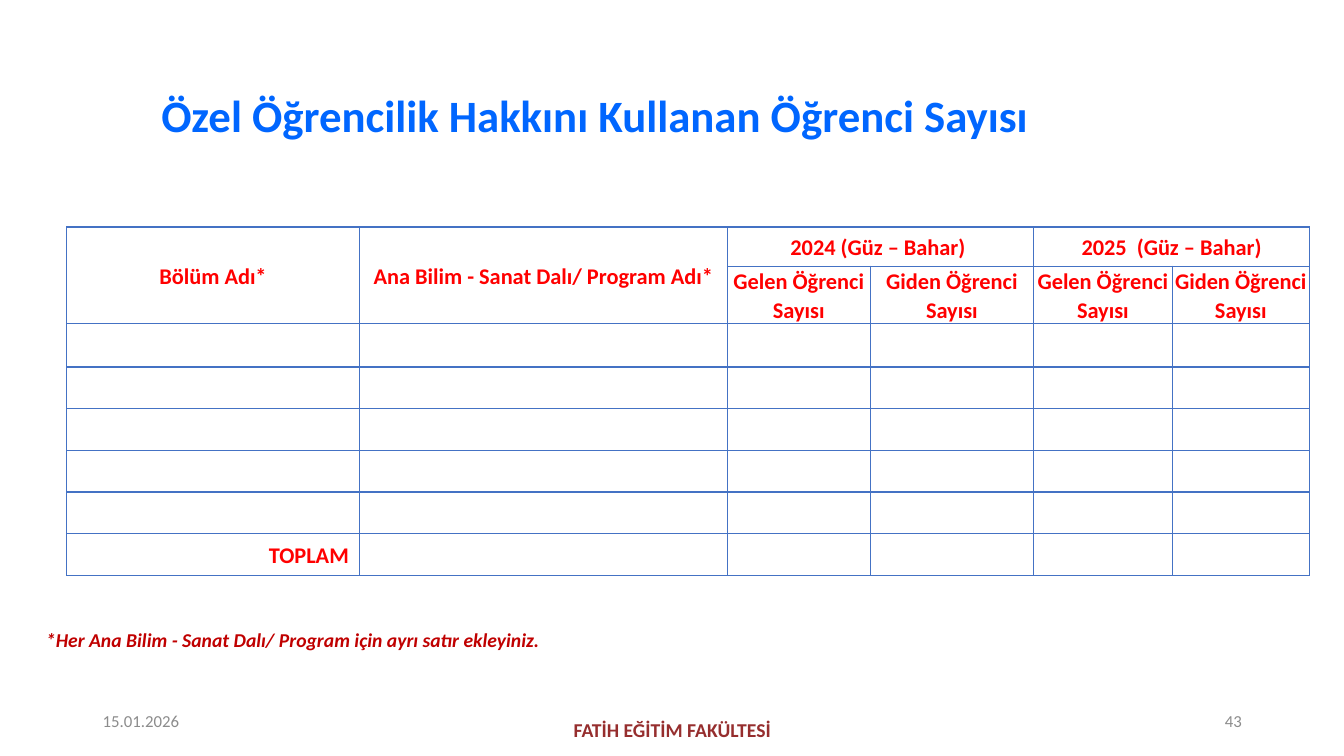
import pptx
import pptx.util
import pptx.dml.color
import pptx.enum.text
import pptx.oxml
import pptx.oxml.ns
import lxml.etree

Cm = pptx.util.Cm
Pt = pptx.util.Pt
ALIGN = pptx.enum.text.PP_ALIGN
ANCHOR = pptx.enum.text.MSO_ANCHOR

COLORS = {
    "title": "0066FF",
    "header": "FF0000",
    "border": "4472C4",
    "note": "C00000",
    "faculty": "962E2E",
    "muted": "8C8C8C",
}
FONT = "Calibri"

TEXTS = [
    {"text": "FATİH EĞİTİM FAKÜLTESİ", "at": (11.23, 17.88, 11.43, 1.02),
     "size": 14, "color": "faculty", "bold": True, "align": ALIGN.CENTER},
    {"text": "Özel Öğrencilik Hakkını Kullanan Öğrenci Sayısı ", "at": (0.41, 2.24, 29.44, 1.47),
     "size": 32, "color": "title", "bold": True, "align": ALIGN.CENTER, "spacing": 0.9},
    {"text": "15.01.2026", "at": (2.34, 17.65, 7.62, 1.02), "size": 12, "color": "muted"},
    {"text": "43", "at": (23.93, 17.65, 7.62, 1.02),
     "size": 12, "color": "muted", "align": ALIGN.RIGHT},
    {"text": "*Her Ana Bilim - Sanat Dalı/ Program için ayrı satır ekleyiniz.",
     "at": (0.91, 15.7, 18.75, 0.86), "size": 14, "color": "note",
     "bold": True, "italic": True, "anchor": ANCHOR.TOP},
]

INCOMING, OUTGOING = "Gelen Öğrenci Sayısı", "Giden Öğrenci Sayısı"
BLANK_ROWS = 5
ROWS = [
    ["Bölüm Adı*", "Ana Bilim - Sanat Dalı/ Program Adı*",
     "2024 (Güz – Bahar) ", "", "2025  (Güz – Bahar)", ""],
    ["", "", INCOMING, OUTGOING, INCOMING, OUTGOING],
    *[[""] * 6 for _ in range(BLANK_ROWS)],
    ["TOPLAM"] + [""] * 5,
]
MERGES = [((0, 0), (1, 0)), ((0, 1), (1, 1)), ((0, 2), (0, 3)), ((0, 4), (0, 5))]
TABLE_LEFT, TABLE_TOP = 1.68, 5.72
COLUMN_WIDTHS = [7.38, 9.27, 3.6, 4.12, 3.49, 3.46]
ROW_HEIGHTS = [0.99, 1.24, 1.09] + [1.05] * BLANK_ROWS
TOTAL_INDENT = 0.27


def write(paragraph, text, size, color, bold=False, italic=False,
          align=ALIGN.LEFT, spacing=None):
    paragraph.text = text
    paragraph.alignment = align
    paragraph.line_spacing = spacing
    font = paragraph.font
    font.name, font.size, font.bold, font.italic = FONT, Pt(size), bold, italic
    font.color.rgb = pptx.dml.color.RGBColor.from_string(COLORS[color])


def add_text(slide, text, at, anchor=ANCHOR.MIDDLE, **style):
    frame = slide.shapes.add_textbox(*map(Cm, at)).text_frame
    frame.word_wrap = True
    frame.vertical_anchor = anchor
    write(frame.paragraphs[0], text, **style)


def draw_borders(cell):
    properties = cell._tc.get_or_add_tcPr()
    for index, side in enumerate(("lnL", "lnR", "lnT", "lnB")):
        line = pptx.oxml.parse_xml(
            f'<a:{side} {pptx.oxml.ns.nsdecls("a")} w="{Pt(1)}"><a:solidFill>'
            f'<a:srgbClr val="{COLORS["border"]}"/></a:solidFill></a:{side}>')
        properties.insert(index, line)


def add_student_table(slide):
    table = slide.shapes.add_table(
        len(ROWS), len(COLUMN_WIDTHS), Cm(TABLE_LEFT), Cm(TABLE_TOP),
        Cm(sum(COLUMN_WIDTHS)), Cm(sum(ROW_HEIGHTS))).table
    table.first_row = table.horz_banding = False
    for column, width in zip(table.columns, COLUMN_WIDTHS):
        column.width = Cm(width)
    for row, height in zip(table.rows, ROW_HEIGHTS):
        row.height = Cm(height)
    for r, labels in enumerate(ROWS):
        for c, label in enumerate(labels):
            cell = table.cell(r, c)
            is_total = label == "TOPLAM"
            write(cell.text_frame.paragraphs[0], label, 16, "header", bold=True,
                  align=ALIGN.RIGHT if is_total else ALIGN.CENTER, spacing=1.07)
            cell.vertical_anchor = ANCHOR.MIDDLE
            cell.margin_left = cell.margin_top = cell.margin_bottom = 0
            cell.margin_right = Cm(TOTAL_INDENT) if is_total else 0
            cell.fill.background()
            draw_borders(cell)
    for first, last in MERGES:
        table.cell(*first).merge(table.cell(*last))


def main():
    deck = pptx.Presentation()
    deck.slide_width, deck.slide_height = Cm(33.87), Cm(19.05)
    slide = deck.slides.add_slide(deck.slide_layouts[6])
    for item in TEXTS:
        add_text(slide, **item)
    add_student_table(slide)
    deck.save("out.pptx")


if __name__ == "__main__":
    main()
